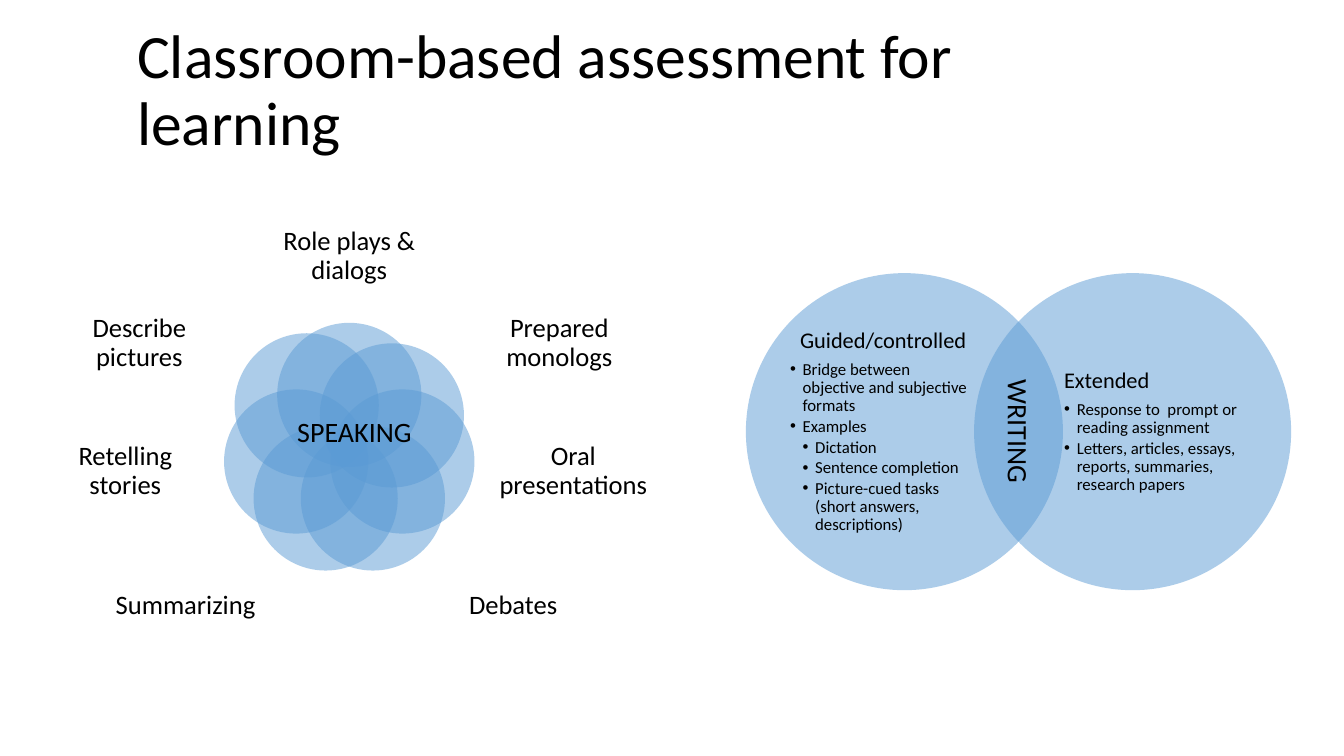
from math import cos, pi, sin

from lxml import etree
from pptx import Presentation
from pptx.dml.color import RGBColor
from pptx.enum import shapes, text
from pptx.oxml.ns import qn
from pptx.util import Pt

BLUE = RGBColor(0x5B, 0x9B, 0xD5)
BLACK = RGBColor(0, 0, 0)
FONT = "Calibri"

# text, offset of the label's middle from the flower's middle, label size
LABELS = [
    ("Role plays & dialogs", 0, -138, 118, 63),
    ("Prepared monologs", 150, -75.5, 111.6, 69),
    ("Oral presentations", 160, 15.6, 109.4, 74),
    ("Debates", 117, 111.7, 118, 67.7),
    ("Summarizing", -117, 111.7, 118, 67.7),
    ("Retelling stories", -160, 15.6, 109.4, 74),
    ("Describe pictures", -150, -75.5, 111.6, 69),
]
# heading, its indent, bullets as (level, text)
GUIDED = ("Guided/controlled", 7.2, [
    (1, "Bridge between objective and subjective formats"),
    (1, "Examples"),
    (2, "Dictation"),
    (2, "Sentence completion"),
    (2, "Picture-cued tasks (short answers, descriptions)"),
])
EXTENDED = ("Extended", 0, [
    (1, "Response to  prompt or reading assignment"),
    (1, "Letters, articles, essays, reports, summaries, research papers"),
])


def write(para, words, size):
    run = para.add_run()
    run.text = words
    run.font.size = Pt(size)
    run.font.name = FONT
    run.font.color.rgb = BLACK


def indent(para, left, hang=0):
    props = para._p.get_or_add_pPr()
    props.set("marL", str(Pt(left)))
    props.set("indent", str(Pt(-hang)))
    return props


def circle(group, left, top, size):
    disc = group.shapes.add_shape(
        shapes.MSO_SHAPE.OVAL, Pt(left), Pt(top), Pt(size), Pt(size))
    disc.shadow.inherit = False
    disc.fill.solid()
    disc.fill.fore_color.rgb = BLUE
    disc.line.fill.background()
    color = disc._element.spPr.find(qn("a:solidFill"))[0]
    etree.SubElement(color, qn("a:alpha"), val="50000")


def panel(group, left, top, width, height):
    """Add a wrapped text box without margins, text in the middle."""
    frame = group.shapes.add_textbox(
        Pt(left), Pt(top), Pt(width), Pt(height)).text_frame
    frame.word_wrap = True
    frame.vertical_anchor = text.MSO_ANCHOR.MIDDLE
    frame.margin_left = frame.margin_right = 0
    frame.margin_top = frame.margin_bottom = 0
    return frame


def caption(slide, words, left, top, width, height, turn=0):
    box = slide.shapes.add_textbox(Pt(left), Pt(top), Pt(width), Pt(height))
    box.rotation = turn
    box.text_frame.word_wrap = True
    box.text_frame.auto_size = text.MSO_AUTO_SIZE.SHAPE_TO_FIT_TEXT
    write(box.text_frame.paragraphs[0], words, 20)


def heading(slide, left, top, width, height):
    title = slide.shapes.title
    title.left, title.top = Pt(left), Pt(top)
    title.width, title.height = Pt(width), Pt(height)
    frame = title.text_frame
    frame.word_wrap = True
    frame.auto_size = text.MSO_AUTO_SIZE.NONE
    frame.vertical_anchor = text.MSO_ANCHOR.MIDDLE
    para = frame.paragraphs[0]
    para.alignment = text.PP_ALIGN.LEFT
    para.line_spacing = 0.9
    write(para, "Classroom-based assessment for learning", 44)


def flower(slide, left, top, width):
    """Ring of overlapping petals, each with a label further out."""
    group = slide.shapes.add_group_shape()
    midx, midy = left + width / 2, top + 170
    ring, size = 38.9, 103
    for i, (words, dx, dy, wide, high) in enumerate(LABELS):
        angle = 2 * pi * i / len(LABELS)
        lift = 7.2 if i == len(LABELS) - 1 else 0  # last petal sits higher
        circle(group, midx + ring * sin(angle) - size / 2,
               midy - ring * cos(angle) - size / 2 - lift, size)
        frame = panel(group, midx + dx - wide / 2, midy + dy - high / 2,
                      wide, high)
        para = frame.paragraphs[0]
        para.alignment = text.PP_ALIGN.CENTER
        para.line_spacing = 0.9
        write(para, words, 19)


def outline(frame, head, inset, items):
    para = frame.paragraphs[0]
    para.line_spacing = 0.9
    para.space_after = Pt(5.6)
    indent(para, inset)
    write(para, head, 16)
    for level, words in items:
        para = frame.add_paragraph()
        para.level = level
        para.line_spacing = 0.9
        para.space_after = Pt(1.8)
        props = indent(para, 9 * level, 9)
        etree.SubElement(props, qn("a:buFont"), typeface="Arial")
        etree.SubElement(props, qn("a:buChar"), char="•")
        write(para, words, 12)


def venn(slide, left, top, width, size):
    group = slide.shapes.add_group_shape()
    sides = [(0, 31.5, GUIDED), (width - size, 227.3, EXTENDED)]
    for x, inset, (head, shift, items) in sides:
        circle(group, left + x, top, size)
        frame = panel(group, left + inset, top + 26.8, 130.3, 172.8)
        outline(frame, head, shift, items)


def main():
    deck = Presentation()
    deck.slide_width, deck.slide_height = Pt(960), Pt(540)
    slide = deck.slides.add_slide(deck.slide_layouts[5])
    heading(slide, 90.7, 25.9, 745.2, 79.9)
    flower(slide, 35, 151, 429)
    venn(slide, 532.8, 195.1, 389.5, 226.5)
    caption(slide, "SPEAKING", 205.2, 292.3, 106.6, 31.7)
    caption(slide, "WRITING", 683.3, 292.3, 88.6, 31.7, 90)
    deck.save("out.pptx")


if __name__ == "__main__":
    main()
